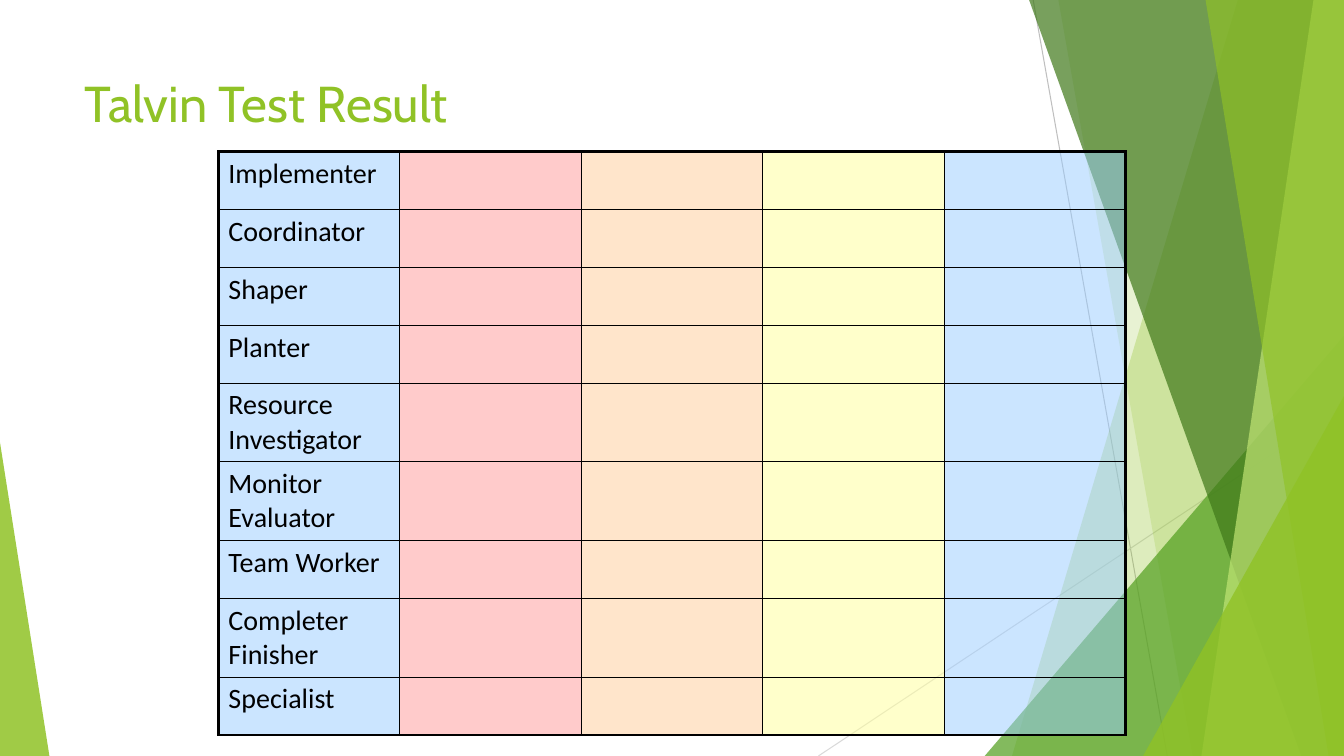
"""Build the Talvin test result slide: faceted backdrop, title and role table."""
import dataclasses

import lxml.etree
import pptx
import pptx.dml.color
import pptx.enum.shapes
import pptx.oxml.ns
import pptx.util

Pt = pptx.util.Pt
WIDTH, HEIGHT = 960, 540


@dataclasses.dataclass(frozen=True)
class Theme:
    lime: str = "90C226"
    green: str = "54A021"
    forest: str = "3F7819"
    pale: str = "C0E474"
    gray: str = "BFBFBF"
    silver: str = "D9D9D9"
    black: str = "000000"
    columns: tuple = ("99CCFF", "FF9999", "FFCC99", "FFFF99", "99CCFF")
    title_font: str = "Cabin"
    table_font: str = "Calibri"
    title_size: int = 36
    table_size: int = 20
    inner_border: float = 1
    outer_border: float = 2.25


THEME = Theme()
ROLES = (
    "Implementer", "Coordinator", "Shaper", "Planter", "Resource Investigator",
    "Monitor Evaluator", "Team Worker", "Completer Finisher", "Specialist",
)
TWO_LINE_ROLES = {"Resource Investigator", "Monitor Evaluator", "Completer Finisher"}


def add_element(parent, tag, **attributes):
    return lxml.etree.SubElement(parent, pptx.oxml.ns.qn(tag), attributes)


def set_fill(fill, properties, color, opacity):
    fill.solid()
    fill.fore_color.rgb = pptx.dml.color.RGBColor.from_string(color)
    solid_fill = properties.find(pptx.oxml.ns.qn("a:solidFill"))
    add_element(solid_fill[0], "a:alpha", val=str(opacity * 1000))


def finish_facet(shape, color, opacity):
    shape.shadow.inherit = False
    shape.line.fill.background()
    set_fill(shape.fill, shape._element.spPr, color, opacity)


def add_line(slide, start, end, color):
    connector = slide.shapes.add_connector(
        pptx.enum.shapes.MSO_CONNECTOR.STRAIGHT, *map(Pt, start + end))
    connector.line.color.rgb = pptx.dml.color.RGBColor.from_string(color)
    connector.line.width = Pt(0.75)
    add_element(connector._element.spPr, "a:effectLst")


def add_band(slide, top_x, bottom_x, color, opacity):
    builder = slide.shapes.build_freeform(Pt(top_x), 0)
    corners = ((WIDTH, 0), (WIDTH, HEIGHT), (bottom_x, HEIGHT))
    builder.add_line_segments([(Pt(x), Pt(y)) for x, y in corners], close=True)
    finish_facet(builder.convert_to_shape(), color, opacity)


def add_triangle(slide, left, top, width, apex, color, opacity):
    shape = slide.shapes.add_shape(
        pptx.enum.shapes.MSO_SHAPE.ISOSCELES_TRIANGLE,
        Pt(left), Pt(top), Pt(width), Pt(HEIGHT - top))
    shape.adjustments[0] = apex
    finish_facet(shape, color, opacity)


def add_backdrop(slide):
    add_line(slide, (738, 0), (833.8, HEIGHT), THEME.gray)
    add_line(slide, (WIDTH, 290.2), (584.6, HEIGHT), THEME.silver)
    add_band(slide, 884.2, 722.9, THEME.lime, 30)
    add_band(slide, 756, 851.8, THEME.lime, 20)
    add_triangle(slide, 703.4, 239.8, 256.6, 1, THEME.green, 72)
    add_band(slide, 735.1, 929.5, THEME.forest, 70)
    add_band(slide, 938.2, 858.2, THEME.pale, 70)
    add_band(slide, 861.1, 949, THEME.lime, 65)
    add_triangle(slide, 816.5, 283, 143.5, 1, THEME.lime, 80)
    add_triangle(slide, 0, 316.1, 35.3, 0, THEME.lime, 85)


def write_text(text_frame, text, font_name, size, color):
    paragraph = text_frame.paragraphs[0]
    paragraph.text = text
    paragraph.font.name = font_name
    paragraph.font.size = Pt(size)
    paragraph.font.color.rgb = pptx.dml.color.RGBColor.from_string(color)


def add_title(slide, text):
    shape = slide.shapes.add_textbox(Pt(53.3), Pt(48.2), Pt(730), Pt(104))
    shape.text_frame.word_wrap = True
    write_text(shape.text_frame, text, THEME.title_font, THEME.title_size, THEME.lime)


def set_borders(properties, outer_sides):
    for side in "LRTB":
        width = THEME.outer_border if side in outer_sides else THEME.inner_border
        line = add_element(properties, "a:ln" + side, w=str(Pt(width)))
        add_element(add_element(line, "a:solidFill"), "a:srgbClr", val=THEME.black)


def add_role_table(slide):
    last_row, last_column = len(ROLES) - 1, len(THEME.columns) - 1
    heights = [56.2 if role in TWO_LINE_ROLES else 41.4 for role in ROLES]
    table = slide.shapes.add_table(
        len(ROLES), len(THEME.columns), Pt(156), Pt(108.2),
        Pt(648), Pt(sum(heights))).table
    table.first_row = table.horz_banding = False
    for row, role in enumerate(ROLES):
        table.rows[row].height = Pt(heights[row])
        for column, color in enumerate(THEME.columns):
            cell = table.cell(row, column)
            properties = cell._tc.get_or_add_tcPr()
            edges = {"L": column == 0, "R": column == last_column,
                     "T": row == 0, "B": row == last_row}
            set_borders(properties, {side for side, outer in edges.items() if outer})
            set_fill(cell.fill, properties, color, 50)
        write_text(table.cell(row, 0).text_frame, role,
                   THEME.table_font, THEME.table_size, THEME.black)


def main():
    presentation = pptx.Presentation()
    presentation.slide_width, presentation.slide_height = Pt(WIDTH), Pt(HEIGHT)
    slide = presentation.slides.add_slide(presentation.slide_layouts[6])
    add_backdrop(slide)
    add_title(slide, "Talvin Test Result")
    add_role_table(slide)
    presentation.save("out.pptx")


if __name__ == "__main__":
    main()
